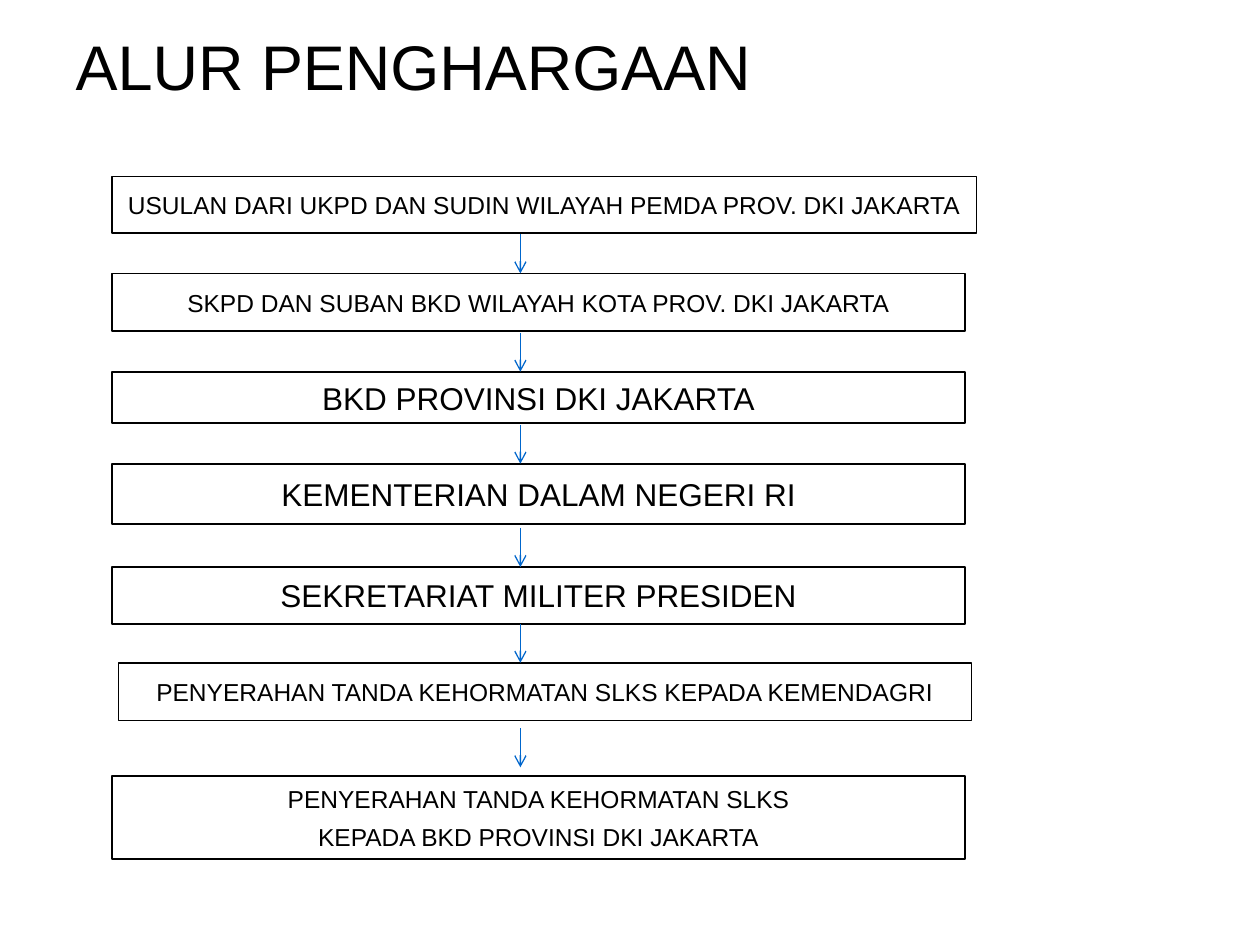
from dataclasses import dataclass

from lxml.etree import SubElement
from pptx import Presentation
from pptx.dml.color import RGBColor
from pptx.enum.shapes import MSO_CONNECTOR, MSO_SHAPE
from pptx.enum.text import MSO_ANCHOR, PP_ALIGN
from pptx.oxml.ns import qn
from pptx.slide import Slide
from pptx.text.text import _Paragraph
from pptx.util import Inches, Pt

COLORS = {"text": "000000", "box": "FFFFFF", "border": "000000", "arrow": "0066CC"}
FONT = "Arial"
ARROW_X = 4.13
ARROW_LENGTH = 0.31


@dataclass
class Step:
    lines: tuple[str, ...]
    top: float
    height: float
    size: int = 14
    left: float = 0.89
    width: float = 6.77


STEPS = [
    Step(("USULAN DARI UKPD DAN SUDIN WILAYAH PEMDA PROV. DKI JAKARTA",), 1.4, 0.45, width=6.86),
    Step(("SKPD DAN SUBAN BKD WILAYAH KOTA PROV. DKI JAKARTA",), 2.17, 0.46),
    Step(("BKD PROVINSI DKI JAKARTA",), 2.95, 0.41, size=18),
    Step(("KEMENTERIAN DALAM NEGERI RI",), 3.68, 0.48, size=18),
    Step(("SEKRETARIAT MILITER PRESIDEN",), 4.5, 0.45, size=18),
    Step(("PENYERAHAN TANDA KEHORMATAN SLKS KEPADA KEMENDAGRI",), 5.26, 0.46, left=0.94),
    Step(("PENYERAHAN TANDA KEHORMATAN SLKS", "KEPADA BKD PROVINSI DKI JAKARTA"), 6.16, 0.66),
]
ARROW_TIPS = [step.top for step in STEPS[1:-1]] + [6.09]


def color(name: str) -> RGBColor:
    return RGBColor.from_string(COLORS[name])


def format_text(paragraph: _Paragraph, size: int, align: PP_ALIGN) -> None:
    paragraph.alignment = align
    paragraph.font.name = FONT
    paragraph.font.size = Pt(size)
    paragraph.font.color.rgb = color("text")


def add_title(slide: Slide, text: str) -> None:
    title = slide.shapes.title
    title.left, title.top = Inches(0.5), Inches(0.2)
    title.width, title.height = Inches(9), Inches(0.64)
    title.text_frame.text = text
    title.text_frame.vertical_anchor = MSO_ANCHOR.MIDDLE
    format_text(title.text_frame.paragraphs[0], 36, PP_ALIGN.LEFT)


def add_step(slide: Slide, step: Step) -> None:
    box = slide.shapes.add_shape(
        MSO_SHAPE.RECTANGLE,
        Inches(step.left), Inches(step.top), Inches(step.width), Inches(step.height),
    )
    box.shadow.inherit = False
    box.fill.solid()
    box.fill.fore_color.rgb = color("box")
    box.line.color.rgb = color("border")
    box.line.width = Pt(1)
    frame = box.text_frame
    frame.word_wrap = False
    frame.vertical_anchor = MSO_ANCHOR.MIDDLE
    frame.text = "\n".join(step.lines)
    for index, paragraph in enumerate(frame.paragraphs):
        format_text(paragraph, step.size, PP_ALIGN.CENTER)
        if index:
            paragraph.space_before = Pt(5)


def add_arrow(slide: Slide, tip: float) -> None:
    arrow = slide.shapes.add_connector(
        MSO_CONNECTOR.STRAIGHT,
        Inches(ARROW_X), Inches(tip - ARROW_LENGTH), Inches(ARROW_X), Inches(tip),
    )
    arrow.line.color.rgb = color("arrow")
    arrow.line.width = Pt(0.75)
    SubElement(arrow.line._get_or_add_ln(), qn("a:tailEnd"), type="arrow")
    SubElement(arrow._element.spPr, qn("a:effectLst"))


def main() -> None:
    deck = Presentation()
    deck.slide_width, deck.slide_height = Inches(10), Inches(7.5)
    slide = deck.slides.add_slide(deck.slide_layouts[5])
    add_title(slide, "ALUR PENGHARGAAN")
    for step in STEPS:
        add_step(slide, step)
    for tip in ARROW_TIPS:
        add_arrow(slide, tip)
    deck.save("out.pptx")


if __name__ == "__main__":
    main()
